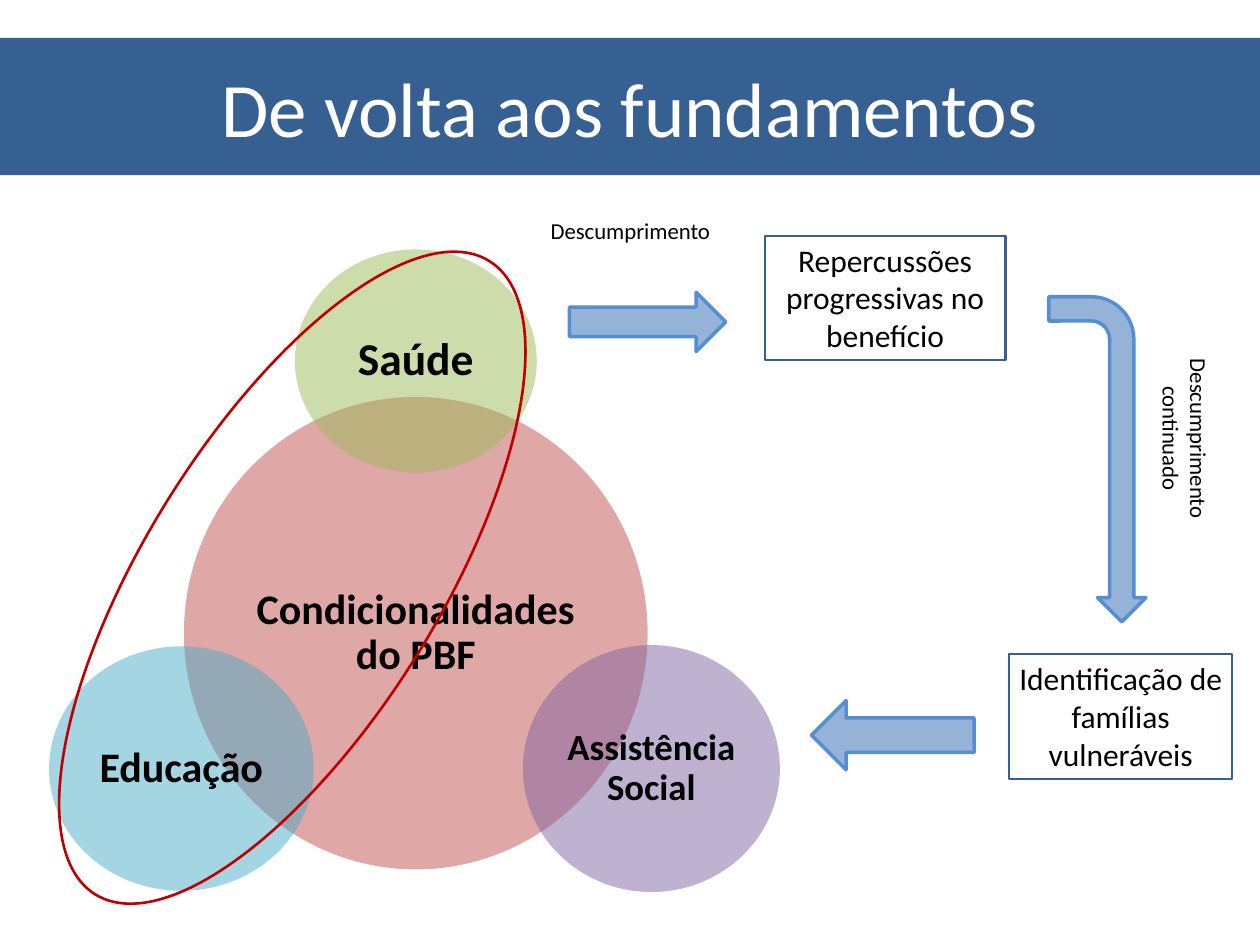
"""Build a slide on programme conditions and the consequences of breaching them."""
import pptx
import pptx.dml.color
import pptx.enum.shapes
import pptx.enum.text
import pptx.oxml.ns
import pptx.util
from lxml import etree

Inches = pptx.util.Inches
Pt = pptx.util.Pt
SHAPES = pptx.enum.shapes.MSO_SHAPE
ANCHOR = pptx.enum.text.MSO_ANCHOR
ALIGN = pptx.enum.text.PP_ALIGN

COLORS = {
    "banner": "376092",
    "center": "C0504D",
    "health": "9BBB59",
    "social": "8064A2",
    "education": "4BACC6",
    "highlight": "C00000",
    "arrow": "95B3D7",
    "arrow_line": "558ED5",
    "white": "FFFFFF",
    "black": "000000",
}


def rgb(name):
    """Return the named palette colour."""
    return pptx.dml.color.RGBColor.from_string(COLORS[name])


def write_text(shape, text, size, color="black", bold=False, align=ALIGN.CENTER,
               anchor=ANCHOR.TOP, margins=(0.08, 0.04), spacing=None):
    """Write one formatted paragraph in a shape."""
    frame = shape.text_frame
    frame.word_wrap = True
    frame.vertical_anchor = anchor
    frame.margin_left = frame.margin_right = Inches(margins[0])
    frame.margin_top = frame.margin_bottom = Inches(margins[1])
    paragraph = frame.paragraphs[0]
    paragraph.alignment = align
    paragraph.line_spacing = spacing
    run = paragraph.add_run()
    run.text = text
    run.font.name = "Calibri"
    run.font.size = Pt(size)
    run.font.bold = bold
    run.font.color.rgb = rgb(color)


def add_shape(slide, kind, box, fill=None, line=None, width=1, opacity=None, rotation=0):
    """Add a preset shape with its fill, outline and rotation."""
    shape = slide.shapes.add_shape(kind, *map(Inches, box))
    shape.shadow.inherit = False
    shape.rotation = rotation
    if fill:
        shape.fill.solid()
        shape.fill.fore_color.rgb = rgb(fill)
    else:
        shape.fill.background()
    if line:
        shape.line.color.rgb = rgb(line)
        shape.line.width = Pt(width)
    else:
        shape.line.fill.background()
    if opacity:
        color = shape.fill._xPr.find(".//" + pptx.oxml.ns.qn("a:srgbClr"))
        etree.SubElement(color, pptx.oxml.ns.qn("a:alpha"), val=str(opacity * 1000))
    return shape


def add_title(slide, box):
    """Add the title banner."""
    banner = add_shape(slide, SHAPES.RECTANGLE, box, fill="banner")
    write_text(banner, "De volta aos fundamentos", 44, color="white", anchor=ANCHOR.MIDDLE)


def add_circles(slide, box):
    """Add the overlapping circles and the ellipse around health and education."""
    left, top = box[:2]
    circles = [
        ("Condicionalidades do PBF", "center", 24, (1.07, 1.17, 3.68, 3.75)),
        ("Saúde", "health", 26, (1.95, 0, 1.92, 1.77)),
        ("Assistência Social", "social", 21, (3.76, 3.14, 2.04, 1.96)),
        ("Educação", "education", 24, (0, 3.15, 2.1, 1.94)),
    ]
    for text, color, size, (x, y, width, height) in circles:
        circle = add_shape(slide, SHAPES.OVAL, (left + x, top + y, width, height),
                           fill=color, opacity=50)
        write_text(circle, text, size, bold=True, anchor=ANCHOR.MIDDLE,
                   margins=(0.03, 0.03), spacing=0.9)
    add_shape(slide, SHAPES.OVAL, (left - 1.03, top + 1.44, 5.92, 2.33),
              line="highlight", width=1.5, rotation=301.9)


def add_flow(slide, box):
    """Add the steps that follow a breach, with their arrows and labels."""
    left, top = box[:2]
    steps = [
        ("Repercussões progressivas no benefício", (1.78, 0.19, 1.91, 0.99)),
        ("Identificação de famílias vulneráveis", (3.72, 3.51, 1.77, 0.99)),
    ]
    for text, (x, y, width, height) in steps:
        step = add_shape(slide, SHAPES.RECTANGLE, (left + x, top + y, width, height),
                         line="banner", width=1.25)
        write_text(step, text, 18)
    arrows = [
        (SHAPES.RIGHT_ARROW, 0, (0.23, 0.64, 1.24, 0.47)),
        (SHAPES.BENT_ARROW, 90, (3.13, 1.58, 2.58, 0.77)),
        (SHAPES.LEFT_ARROW, 0, (2.15, 3.88, 1.29, 0.55)),
    ]
    for kind, rotation, (x, y, width, height) in arrows:
        add_shape(slide, kind, (left + x, top + y, width, height), fill="arrow",
                  line="arrow_line", width=2, rotation=rotation)
    labels = [
        ("Descumprimento", 0, ALIGN.LEFT, (0, 0, 1.47, 0.3)),
        ("Descumprimento continuado", 90, ALIGN.CENTER, (4.2, 1.54, 1.83, 0.52)),
    ]
    for text, rotation, align, (x, y, width, height) in labels:
        label = slide.shapes.add_textbox(
            *map(Inches, (left + x, top + y, width, height)))
        label.rotation = rotation
        write_text(label, text, 13, align=align)


def main():
    """Build and save the presentation."""
    presentation = pptx.Presentation()
    presentation.slide_width = Inches(10)
    presentation.slide_height = Inches(7.5)
    slide = presentation.slides.add_slide(presentation.slide_layouts[6])
    add_title(slide, (0, 0.3, 10, 1.09))
    add_circles(slide, (0.39, 1.98, 5.8, 5.1))
    add_flow(slide, (4.29, 1.68, 5.49, 4.5))
    presentation.save("out.pptx")


if __name__ == "__main__":
    main()
